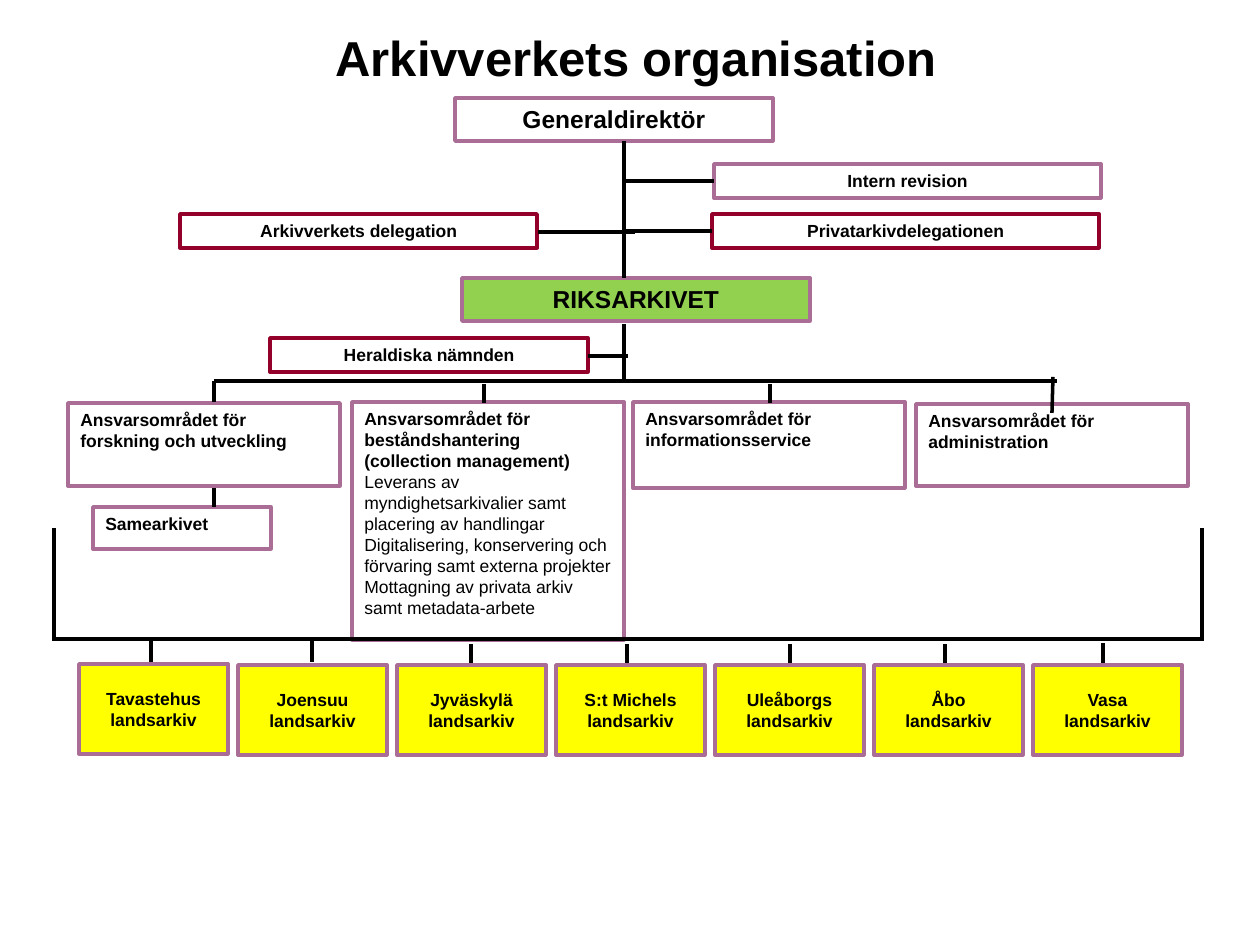
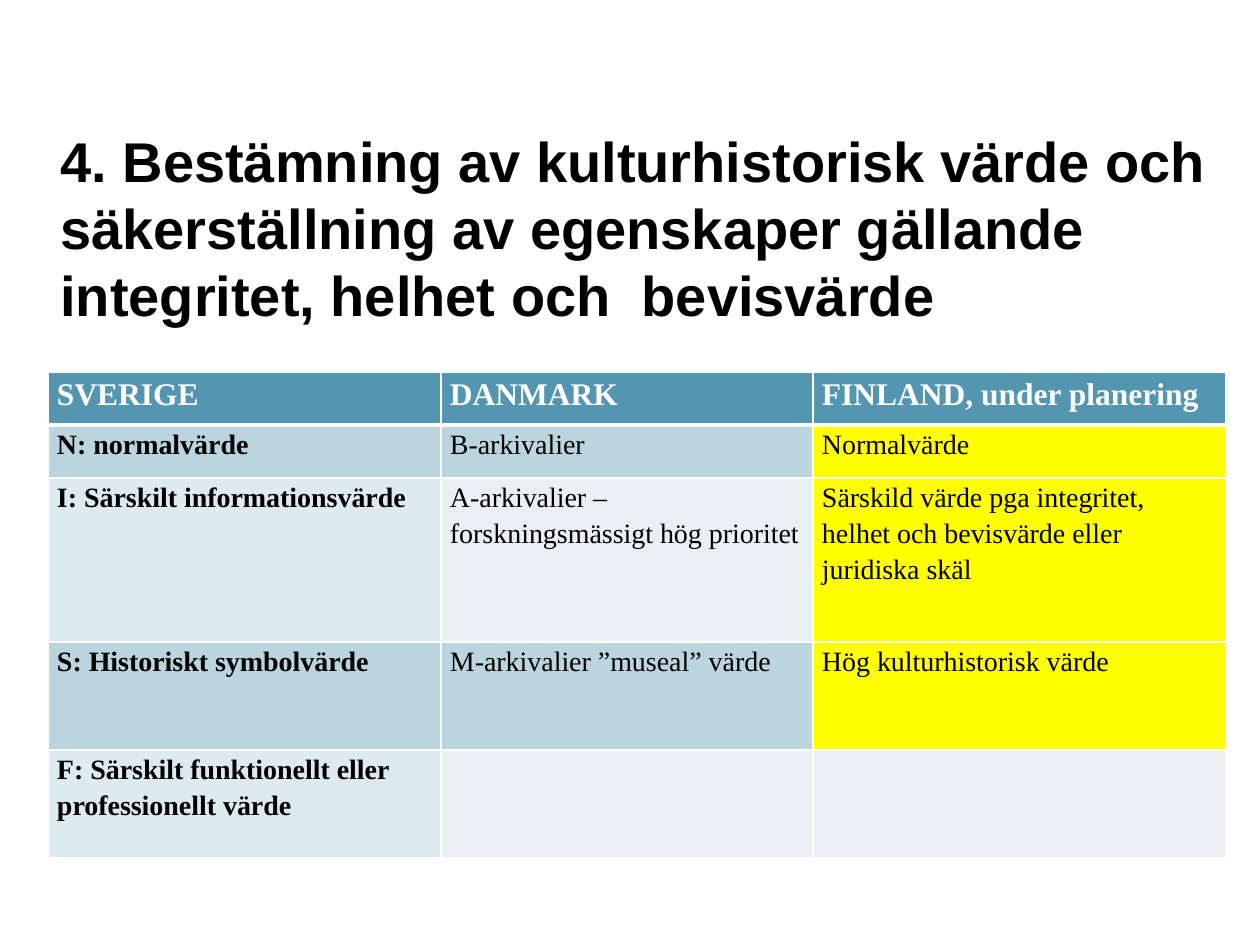
import pptx
import pptx.dml.color
import pptx.enum.shapes
import pptx.enum.text
import pptx.oxml
import pptx.oxml.ns
import pptx.util

RGB = pptx.dml.color.RGBColor
BLACK = RGB(0x00, 0x00, 0x00)
WHITE = RGB(0xFF, 0xFF, 0xFF)
MAUVE = RGB(0xAA, 0x6E, 0x96)
CRIMSON = RGB(0x93, 0x00, 0x2A)
GREEN = RGB(0x92, 0xD0, 0x50)
YELLOW = RGB(0xFF, 0xFF, 0x00)
TEAL = RGB(0x54, 0x96, 0xAF)
BAND_DARK = RGB(0xBB, 0xD5, 0xDF)
BAND_LIGHT = RGB(0xDD, 0xEA, 0xEF)
BAND_PALE = RGB(0xE9, 0xEF, 0xF2)

SANS, SERIF = "Arial", "Times New Roman"
PX_PER_INCH = 126
LEFT = pptx.enum.text.PP_ALIGN.LEFT
CENTER = pptx.enum.text.PP_ALIGN.CENTER
TOP = pptx.enum.text.MSO_ANCHOR.TOP
MIDDLE = pptx.enum.text.MSO_ANCHOR.MIDDLE


def px(length):
    return pptx.util.Emu(round(length * 914400 / PX_PER_INCH))


def apply(target, values):
    for name, value in values.items():
        setattr(target, name, value)


def write(frame, paragraphs, font, align=LEFT, spacing=None):
    """Fill a text frame from (text, bold) pairs."""
    for index, (text, bold) in enumerate(paragraphs):
        paragraph = frame.add_paragraph() if index else frame.paragraphs[0]
        apply(paragraph, {"alignment": align, "line_spacing": spacing})
        run = paragraph.add_run()
        run.text = text
        color = font.get("color", BLACK)
        apply(run.font, {"name": font["name"], "bold": bold,
                         "size": pptx.util.Pt(font["size"])})
        run.font.color.rgb = color


def add_title(slide, box, text, size, align=LEFT):
    title = slide.shapes.add_textbox(*map(px, box))
    title.text_frame.word_wrap = True
    write(title.text_frame, [(text, True)], {"name": SANS, "size": size}, align)


def add_unit(slide, origin, box, paragraphs, fill=WHITE, border=MAUVE,
             size=10, align=CENTER, anchor=TOP):
    """Outlined box of the chart, placed relative to its region."""
    left, top, width, height = box
    unit = slide.shapes.add_shape(
        pptx.enum.shapes.MSO_SHAPE.RECTANGLE,
        px(origin[0] + left), px(origin[1] + top), px(width), px(height))
    unit.shadow.inherit = False
    unit.fill.solid()
    unit.fill.fore_color.rgb = fill
    unit.line.color.rgb = border
    unit.line.width = pptx.util.Pt(2)
    apply(unit.text_frame, {"word_wrap": True, "vertical_anchor": anchor})
    write(unit.text_frame, paragraphs, {"name": SANS, "size": size}, align)


def add_links(slide, origin, links):
    """Black lines, each (x1, y1, x2, y2) relative to the region."""
    x, y = origin[:2]
    for x1, y1, x2, y2 in links:
        link = slide.shapes.add_connector(
            pptx.enum.shapes.MSO_CONNECTOR.STRAIGHT,
            px(x + x1), px(y + y1), px(x + x2), px(y + y2))
        link.line.color.rgb = BLACK
        link.line.width = pptx.util.Pt(2)
        properties = link._element.spPr
        properties.append(pptx.oxml.parse_xml(
            f"<a:effectLst {pptx.oxml.ns.nsdecls('a')}/>"))


def draw_leadership(slide, region):
    units = [
        ("Generaldirektör", (275, 0, 318, 43), WHITE, MAUVE, 14),
        ("Intern revision", (534, 66, 387, 34), WHITE, MAUVE, 10),
        ("Privatarkivdelegationen", (532, 116, 387, 34), WHITE, CRIMSON, 10),
        ("Arkivverkets delegation", (0, 116, 357, 34), WHITE, CRIMSON, 10),
        ("Heraldiska nämnden", (90, 240, 318, 34), WHITE, CRIMSON, 10),
        ("RIKSARKIVET", (282, 180, 348, 43), GREEN, MAUVE, 14),
    ]
    for name, box, fill, border, size in units:
        add_unit(slide, region, box, [(name, True)], fill, border, size)
    spine = 444
    add_links(slide, region, [
        (spine, 43, spine, 180),
        (spine, 226, spine, region[3]),
        (358, 134, 455, 134),
        (spine, 133, 532, 133),
        (spine, 83, 534, 83),
        (408, 258, 448, 258),
    ])


def draw_areas(slide, region):
    areas = [
        ((0, 22, 272, 83), "forskning och utveckling", []),
        ((284, 21, 272, 238), "beståndshantering (collection management)", [
            "Leverans av myndighetsarkivalier samt placering av handlingar",
            "Digitalisering, konservering och förvaring samt externa projekter",
            "Mottagning av privata arkiv samt metadata-arbete"]),
        ((565, 21, 272, 86), "informationsservice", []),
        ((848, 23, 272, 82), "administration", []),
    ]
    for box, field, tasks in areas:
        paragraphs = [(f"Ansvarsområdet för {field}", True)]
        paragraphs += [(task, False) for task in tasks]
        add_unit(slide, region, box, paragraphs, align=LEFT)
    add_unit(slide, region, (25, 126, 178, 42), [("Samearkivet", True)], align=LEFT)
    add_links(slide, region, [
        (146, 0, 989, 0),       # rail above the areas
        (146, 0, 146, 21),
        (416, 3, 416, 22),
        (702, 3, 702, 22),
        (984, 32, 985, -4),
        (146, 107, 146, 126),   # down to Samearkivet
    ])


def draw_provincial_archives(slide, region):
    width, rail = region[2], 111
    # Bracket around the archives
    add_links(slide, region, [
        (1, 0, 1, rail + 2),
        (width - 1, 0, width - 1, rail + 2),
        (0, rail, width, rail),
    ])
    # Town, x and top of its tick, top of its box
    archives = [
        ("Tavastehus", 98, 113, 136), ("Joensuu", 259, 113, 137),
        ("Jyväskylä", 418, 116, 137), ("S:t Michels", 574, 116, 137),
        ("Uleåborgs", 737, 116, 137), ("Åbo", 892, 116, 137),
        ("Vasa", 1050, 115, 137),
    ]
    for index, (town, tick_x, tick_top, box_top) in enumerate(archives):
        add_links(slide, region, [(tick_x, tick_top, tick_x, tick_top + 21)])
        add_unit(slide, region, (26 + 159 * index, box_top, 149, 90),
                 [(f"{town} landsarkiv", True)], YELLOW, anchor=MIDDLE)


def set_borders(cell, bottom_points):
    properties = cell._tc.get_or_add_tcPr()
    widths = {"lnL": 1, "lnR": 1, "lnT": 1, "lnB": bottom_points}
    for position, (side, points) in enumerate(widths.items()):
        properties.insert(position, pptx.oxml.parse_xml(
            f'<a:{side} {pptx.oxml.ns.nsdecls("a")} w="{points * 12700}">'
            f'<a:solidFill><a:srgbClr val="{WHITE}"/></a:solidFill></a:{side}>'))


def draw_value_table(slide, region):
    rows = [
        (53, ("SVERIGE", "DANMARK", "FINLAND, under planering"),
         (TEAL, TEAL, TEAL)),
        (53, ("N: normalvärde", "B-arkivalier", "Normalvärde"),
         (BAND_DARK, BAND_DARK, YELLOW)),
        (164, ("I: Särskilt informationsvärde",
               "A-arkivalier – forskningsmässigt hög prioritet",
               "Särskild värde pga integritet, helhet och bevisvärde "
               "eller juridiska skäl"),
         (BAND_LIGHT, BAND_PALE, YELLOW)),
        (108, ("S: Historiskt symbolvärde", "M-arkivalier ”museal” värde",
               "Hög kulturhistorisk värde"),
         (BAND_DARK, BAND_DARK, YELLOW)),
        (108, ("F: Särskilt funktionellt eller professionellt värde", "", ""),
         (BAND_LIGHT, BAND_PALE, BAND_PALE)),
    ]
    columns = (393, 372, 413)
    table = slide.shapes.add_table(len(rows), len(columns), *map(px, region)).table
    for column, width in zip(table.columns, columns):
        column.width = px(width)
    margins = {"margin_left": px(9), "margin_right": px(9),
               "margin_top": 0, "margin_bottom": 0}
    for r, (height, texts, fills) in enumerate(rows):
        table.rows[r].height = px(height)
        header = r == 0
        font = {"name": SERIF, "size": 18 if header else 16,
                "color": WHITE if header else BLACK}
        for c, (text, fill) in enumerate(zip(texts, fills)):
            cell = table.cell(r, c)
            apply(cell, margins)
            cell.fill.solid()
            cell.fill.fore_color.rgb = fill
            set_borders(cell, 3 if header else 1)
            if text:
                write(cell.text_frame, [(text, header or c == 0)], font, spacing=1.15)


def main():
    deck = pptx.Presentation()
    apply(deck, {"slide_width": px(1260), "slide_height": px(945)})
    blank = deck.slide_layouts[6]

    organisation = deck.slides.add_slide(blank)
    add_title(organisation, (62, 21, 1148, 72), "Arkivverkets organisation", 28, CENTER)
    draw_leadership(organisation, (180, 98, 922, 283))
    draw_areas(organisation, (68, 381, 1120, 259))
    draw_provincial_archives(organisation, (53, 528, 1150, 227))

    values = deck.slides.add_slide(blank)
    add_title(values, (48, 120, 1178, 217),
              "4. Bestämning av kulturhistorisk värde och säkerställning av "
              "egenskaper gällande integritet, helhet och  bevisvärde", 32)
    draw_value_table(values, (48, 372, 1178, 486))

    deck.save("out.pptx")


if __name__ == "__main__":
    main()
